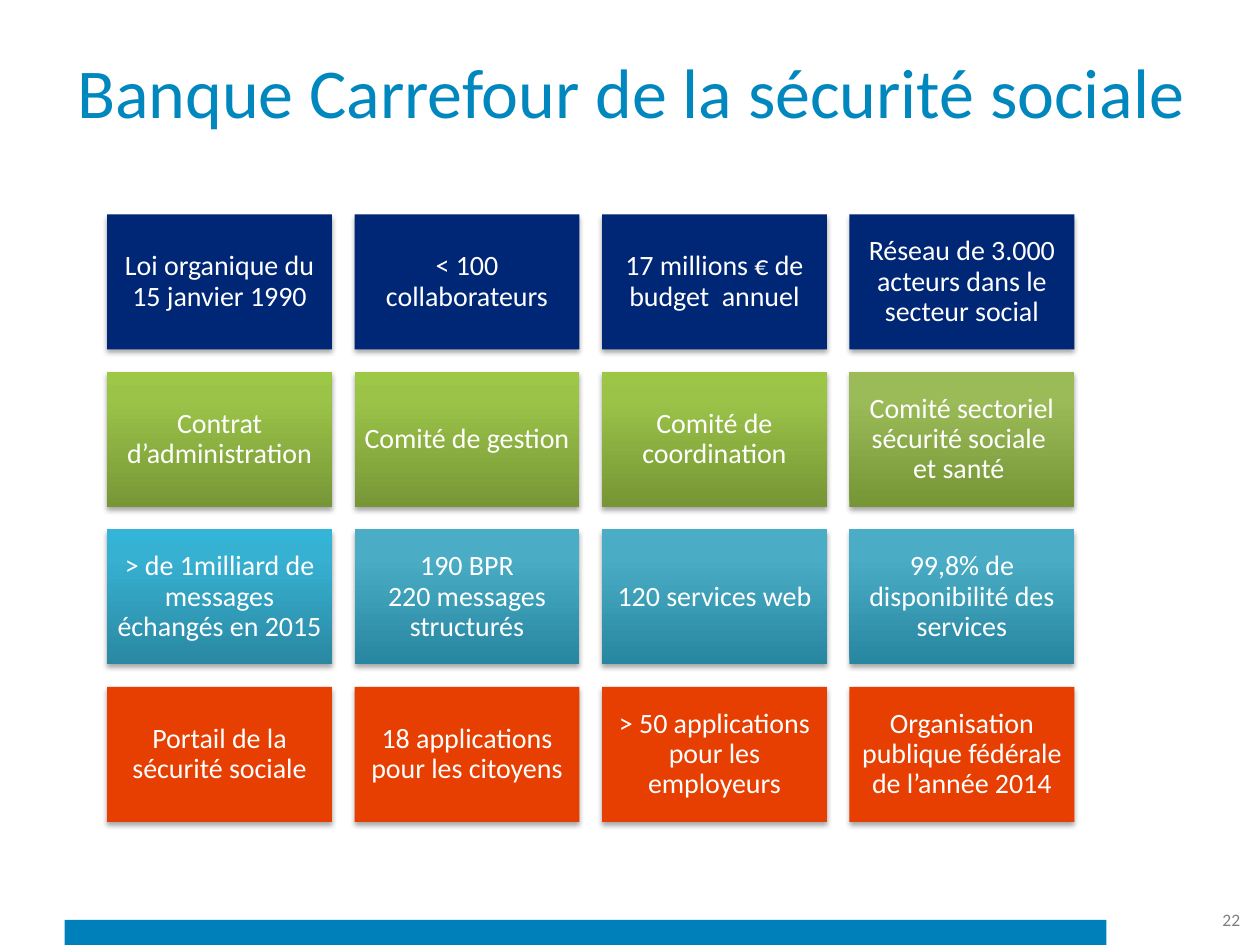
import pptx
import pptx.dml.color
import pptx.enum.shapes
import pptx.enum.text
import pptx.oxml.ns
import pptx.util
from lxml import etree

Pt = pptx.util.Pt
RGB = pptx.dml.color.RGBColor.from_string
ALIGN = pptx.enum.text.PP_ALIGN
MIDDLE = pptx.enum.text.MSO_ANCHOR.MIDDLE
RECT = pptx.enum.shapes.MSO_SHAPE.RECTANGLE
qn = pptx.oxml.ns.qn

COLORS = {
    "bar": "0080BB",
    "title": "0087BE",
    "number": "808080",
    "white": "FFFFFF",
    "shadow": "000000",
    "navy": "002776",
    "orange": "E73E01",
}
FADES = {
    "lime": ("779737", "9BC348", "9DC746"),
    "leaf": ("769535", "9BC348", "9CC746"),
    "olive": ("769535", "9BBB59", "9BBB59"),
    "cyan": ("2A88A2", "37B1D2", "34B4D6"),
    "teal": ("2787A0", "4BACC6", "4BACC6"),
}
STOPS = (0, 80, 100)

ROWS = [
    [
        ("Loi organique du 15 janvier 1990", "navy"),
        ("< 100 collaborateurs", "navy"),
        ("17 millions € de budget  annuel", "navy"),
        ("Réseau de 3.000 acteurs dans le secteur social", "navy"),
    ],
    [
        ("Contrat d’administration", "lime"),
        ("Comité de gestion", "lime"),
        ("Comité de coordination", "leaf"),
        ("Comité sectoriel sécurité sociale \vet santé ", "olive"),
    ],
    [
        ("> de 1milliard de messages échangés en 2015", "cyan"),
        ("190 BPR\v220 messages structurés", "teal"),
        ("120 services web", "teal"),
        ("99,8% de disponibilité des services", "teal"),
    ],
    [
        ("Portail de la sécurité sociale", "orange"),
        ("18 applications pour les citoyens", "orange"),
        ("> 50 applications pour les employeurs", "orange"),
        ("Organisation publique fédérale de l’année 2014", "orange"),
    ],
]


def write(frame, text, size=16, color="white", align=ALIGN.CENTER, inset=5, pitch=1.0):
    frame.word_wrap = True
    frame.vertical_anchor = MIDDLE
    frame.margin_left = frame.margin_right = Pt(inset)
    frame.margin_top = frame.margin_bottom = Pt(inset)
    line = frame.paragraphs[0]
    line.text = text
    line.alignment = align
    line.line_spacing = pitch
    for run in line.runs:
        run.font.name = "Calibri"
        run.font.size = Pt(size)
        run.font.color.rgb = RGB(COLORS[color])


class Deck:
    def __init__(self, wide, high):
        self.show = pptx.Presentation()
        self.show.slide_width, self.show.slide_height = Pt(wide), Pt(high)
        self.slide = self.show.slides.add_slide(self.show.slide_layouts[6])

    def label(self, text, box, **style):
        shape = self.slide.shapes.add_textbox(*map(Pt, box))
        write(shape.text_frame, text, **style)

    def block(self, box, color):
        shape = self.slide.shapes.add_shape(RECT, *map(Pt, box))
        shape.shadow.inherit = False
        shape.line.fill.background()
        if color in FADES:
            self.fade(shape, FADES[color])
        else:
            shape.fill.solid()
            shape.fill.fore_color.rgb = RGB(COLORS[color])
        return shape

    def fade(self, shape, tones):
        shape.fill.gradient()
        shape.fill.gradient_angle = 90
        stops = next(shape.element.iter(qn("a:gsLst")))
        stops.clear()
        for place, tone in zip(STOPS, tones):
            stop = etree.SubElement(stops, qn("a:gs"), pos=str(place * 1000))
            etree.SubElement(stop, qn("a:srgbClr"), val=tone)

    def shade(self, shape):
        effects = next(shape.element.iter(qn("a:effectLst")))
        shadow = etree.SubElement(
            effects, qn("a:outerShdw"), blurRad=str(Pt(3.1)), dist=str(Pt(1.8)),
            dir="5400000", rotWithShape="0")
        tone = etree.SubElement(shadow, qn("a:srgbClr"), val=COLORS["shadow"])
        etree.SubElement(tone, qn("a:alpha"), val="35000")

    def card(self, text, box, color):
        shape = self.block(box, color)
        self.shade(shape)
        write(shape.text_frame, text, pitch=0.9)


def main():
    deck = Deck(720, 540)
    deck.block((37, 525.6, 595.2, 14.4), "bar")
    deck.label("Banque Carrefour de la sécurité sociale", (36.7, 15.1, 648, 72.7),
               size=40, color="title", inset=0)
    deck.label("22", (656.6, 511.2, 59.1, 28.8), size=10, color="number",
               align=ALIGN.RIGHT, inset=7.2)

    left, top, wide, high = 61.2, 122.6, 128.5, 77.1
    gap = 12.9
    for row, cards in enumerate(ROWS):
        for col, (text, color) in enumerate(cards):
            box = (left + col * (wide + gap), top + row * (high + gap), wide, high)
            deck.card(text, box, color)

    deck.show.save("out.pptx")


if __name__ == "__main__":
    main()
